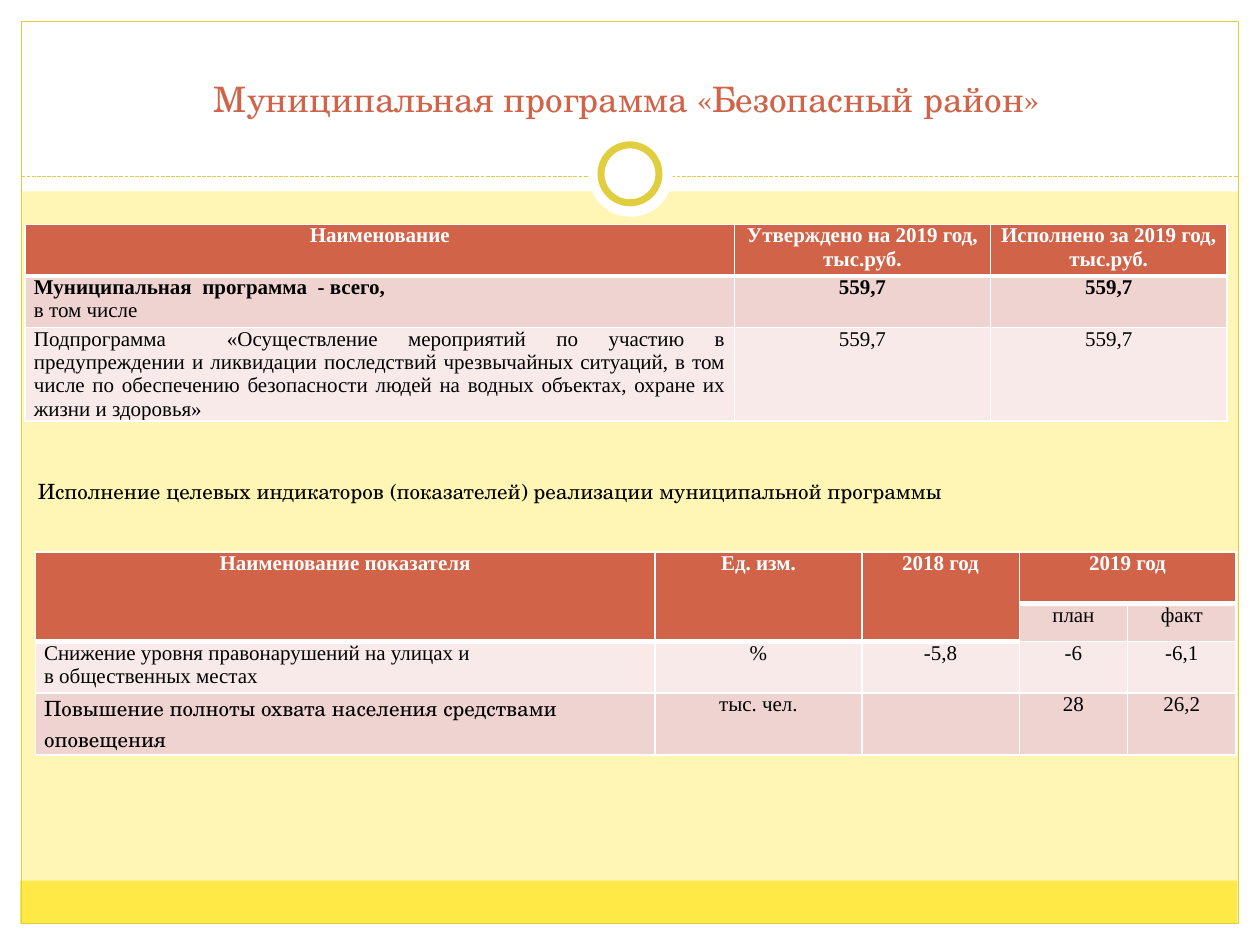
from dataclasses import dataclass

from lxml.etree import SubElement
from pptx import Presentation
from pptx.dml.color import RGBColor
from pptx.enum.dml import MSO_LINE
from pptx.enum.shapes import MSO_CONNECTOR, MSO_SHAPE
from pptx.enum.text import MSO_ANCHOR, MSO_AUTO_SIZE, PP_ALIGN
from pptx.oxml.ns import qn
from pptx.util import Pt

SCALE = 9144


@dataclass(frozen=True)
class Theme:
    """Colours, fonts and type sizes."""
    page: str = "FFF6B5"
    white: str = "FFFFFF"
    black: str = "000000"
    gold: str = "E1CE3F"
    foot: str = "FFE947"
    head: str = "D16349"
    dark: str = "EED3D0"
    light: str = "F7EAE9"
    serif: str = "Times New Roman"
    school: str = "TeX Gyre Schola"
    big: int = 20
    small: int = 12


def px(*sizes):
    """Turn px into EMU."""
    return [size * SCALE for size in sizes]


def tint(code):
    """Read a hex colour."""
    return RGBColor.from_string(code)


def write(frame, text, font, size, color, align=None, bold=0):
    """Fill a frame with one paragraph a line, the first ones bold."""
    frame.text = text
    for rank, para in enumerate(frame.paragraphs):
        para.alignment = align
        for run in para.runs:
            run.font.name = font
            run.font.size = Pt(size)
            run.font.bold = rank < bold
            run.font.color.rgb = tint(color)


class Deck:
    """Holds the style and the current slide."""

    def __init__(self, theme):
        """Open a deck with one slide."""
        self.theme = theme
        self.show = Presentation()
        self.show.slide_width, self.show.slide_height = px(1000, 750)
        self.slide = self.show.slides.add_slide(self.show.slide_layouts[1])
        self.shapes = self.slide.shapes
        fill = self.slide.background.fill
        fill.solid()
        fill.fore_color.rgb = tint(theme.page)

    def shape(self, kind, box, fill=None, line=None, width=0.75):
        """Add a preset shape."""
        shape = self.shapes.add_shape(kind, *px(*box))
        shape.shadow.inherit = False
        if fill:
            shape.fill.solid()
            shape.fill.fore_color.rgb = tint(fill)
        else:
            shape.fill.background()
        if line:
            shape.line.color.rgb = tint(line)
            shape.line.width = Pt(width)
        else:
            shape.line.fill.background()

    def rule(self, ends, color):
        """Add a dashed line."""
        rule = self.shapes.add_connector(MSO_CONNECTOR.STRAIGHT, *px(*ends))
        rule.line.color.rgb = tint(color)
        rule.line.width = Pt(0.75)
        rule.line.dash_style = MSO_LINE.SQUARE_DOT
        SubElement(rule._element.spPr, qn("a:effectLst"))

    def place(self, slot, box, text, anchor, **form):
        """Move a placeholder to the front and fill it."""
        slot.left, slot.top, slot.width, slot.height = px(*box)
        self.shapes._spTree.append(slot._element)
        frame = slot.text_frame
        frame.word_wrap = True
        frame.auto_size = MSO_AUTO_SIZE.NONE
        frame.vertical_anchor = anchor
        write(frame, text, **form)
        return frame.paragraphs[0]

    def title(self, box, text):
        """Set the title."""
        look = self.theme
        self.place(self.shapes.title, box, text, MSO_ANCHOR.BOTTOM,
                   font=look.school, size=look.big, color=look.head,
                   align=PP_ALIGN.CENTER)

    def body(self, box, text):
        """Set the body line with a hanging indent."""
        look = self.theme
        para = self.place(self.slide.placeholders[1], box, text,
                          MSO_ANCHOR.TOP, font=look.school, size=look.small,
                          color=look.black)
        para.space_before = Pt(2.4)
        props = para._p.get_or_add_pPr()
        props.set("marL", str(30 * SCALE))
        props.set("indent", str(-30 * SCALE))
        SubElement(props, qn("a:buNone"))

    def edge(self, cell, top, base):
        """Draw white borders round a cell."""
        props = cell._tc.get_or_add_tcPr()
        for side, width in zip("LRTB", (1, 1, top, base)):
            line = SubElement(props, qn(f"a:ln{side}"), w=str(Pt(width)))
            fill = SubElement(line, qn("a:solidFill"))
            SubElement(fill, qn("a:srgbClr"), val=self.theme.white)

    def table(self, spot, cols, tall, rows, spans=(), forms=None):
        """Add a banded table; spans give first and last merged cells."""
        look = self.theme
        box = px(*spot, sum(cols), sum(tall))
        grid = self.shapes.add_table(len(rows), len(cols), *box).table
        grid.first_row = grid.horz_banding = False
        for col, width in zip(grid.columns, px(*cols)):
            col.width = width
        for row, height in zip(grid.rows, px(*tall)):
            row.height = height
        heads = {(0, y) for y in range(len(cols))}
        for first, last in spans:
            grid.cell(*first).merge(grid.cell(*last))
            heads |= {first, last}
        for x, row in enumerate(rows):
            for y, text in enumerate(row):
                cell = grid.cell(x, y)
                head = (x, y) in heads
                cell.margin_left, cell.margin_right = px(7, 7)
                cell.margin_top = cell.margin_bottom = 0
                self.edge(cell, 3 if (x - 1, y) in heads else 1,
                          3 if head else 1)
                cell.fill.solid()
                band = look.dark if x % 2 else look.light
                cell.fill.fore_color.rgb = tint(look.head if head else band)
                form = dict(font=look.serif, size=look.small, bold=head,
                            color=look.white if head else look.black,
                            align=PP_ALIGN.CENTER)
                form.update((forms or {}).get((x, y), {}))
                if text:
                    write(cell.text_frame, text, **form)


def main():
    """Build the slide."""
    look = Theme()
    deck = Deck(look)
    rect, oval = MSO_SHAPE.RECTANGLE, MSO_SHAPE.OVAL
    for box in ((0, 733, 1000, 17), (0, 0, 1000, 152),
                (0, 0, 17, 750), (983, 0, 17, 750)):
        deck.shape(rect, box, look.white)
    deck.shape(rect, (16, 699, 966, 34), look.foot)
    deck.shape(rect, (17, 17, 966, 716), line=look.gold)
    deck.rule((17, 140, 983, 140), look.gold)
    deck.shape(oval, (467, 105, 67, 67), look.white)
    deck.shape(oval, (477, 115, 46, 46), look.white, look.gold, 4)

    deck.title((31, 47, 933, 53), "Муниципальная программа «Безопасный район»")
    just = PP_ALIGN.JUSTIFY
    deck.table((20, 178), (563, 203, 188), (41, 41, 41), (
        ("Наименование", "Утверждено на 2019 год, тыс.руб.",
         "Исполнено за 2019 год, тыс.руб."),
        ("Муниципальная  программа  - всего,\nв том числе", "559,7", "559,7"),
        ("Подпрограмма  «Осуществление мероприятий по участию в "
         "предупреждении и ликвидации последствий чрезвычайных ситуаций, "
         "в том числе по обеспечению безопасности людей на водных объектах, "
         "охране их жизни и здоровья»", "559,7", "559,7"),
    ), forms={(1, 0): dict(align=just, bold=1), (1, 1): dict(bold=1),
              (1, 2): dict(bold=1), (2, 0): dict(align=just)})
    deck.body((20, 375, 930, 39), "Исполнение целевых индикаторов "
              "(показателей) реализации муниципальной программы")
    left = PP_ALIGN.LEFT
    deck.table((28, 438), (492, 164, 125, 86, 86), (41, 30, 41, 41), (
        ("Наименование показателя", "Ед. изм.", "2018 год", "2019 год", ""),
        ("", "", "", "план", "факт"),
        ("Снижение уровня правонарушений на улицах и\nв общественных местах",
         "%", "-5,8", "-6", "-6,1"),
        ("Повышение полноты охвата населения средствами оповещения",
         "тыс. чел.", "", "28", "26,2"),
    ), spans=[((0, y), (1, y)) for y in range(3)] + [((0, 3), (0, 4))],
        forms={(2, 0): dict(align=left),
               (3, 0): dict(align=left, font=look.school)})
    deck.show.save("out.pptx")


if __name__ == "__main__":
    main()
